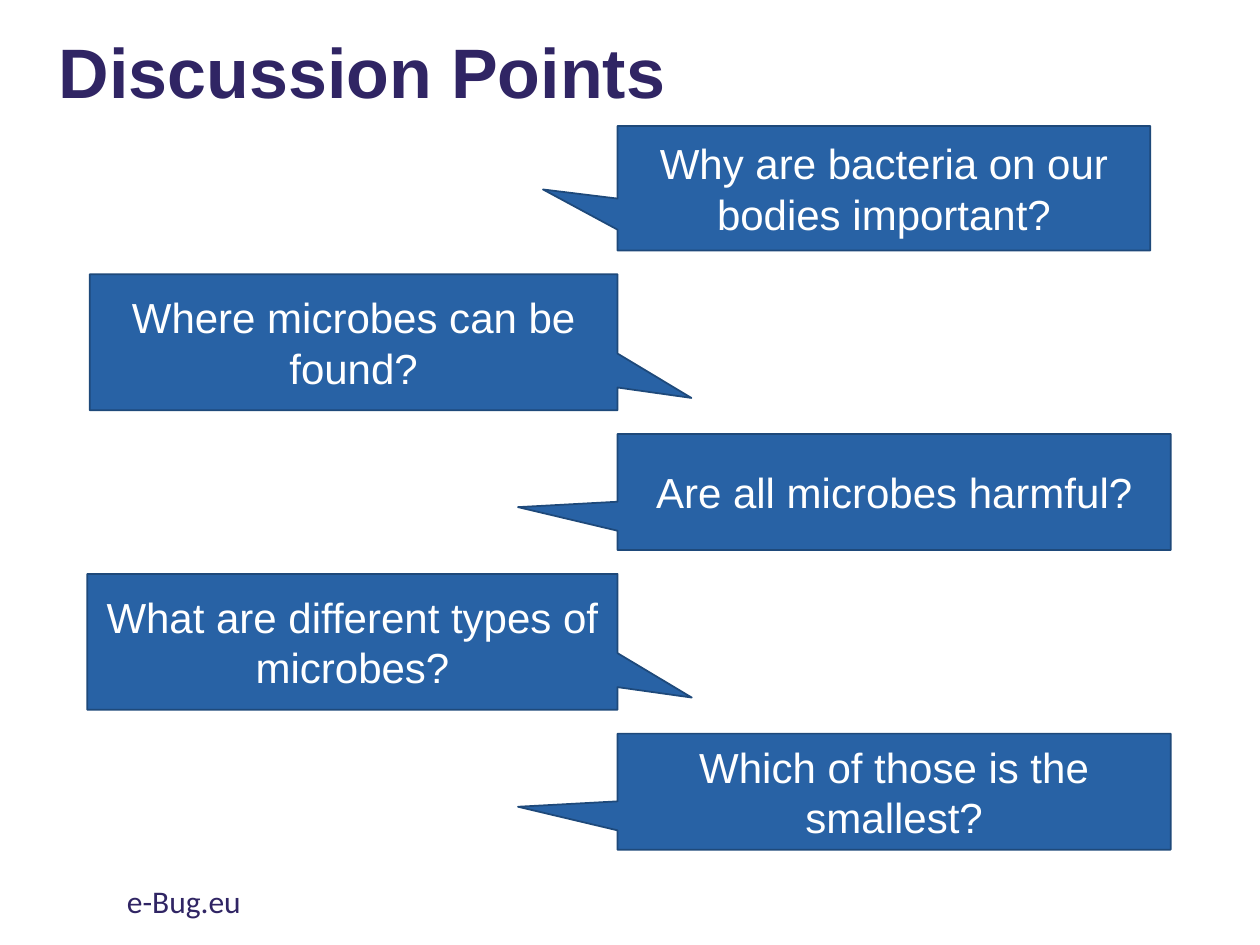
import pptx
import pptx.dml.color
import pptx.enum.shapes
import pptx.enum.text
import pptx.util
from dataclasses import dataclass

Cm = pptx.util.Cm
Pt = pptx.util.Pt
Align = pptx.enum.text.PP_ALIGN
Anchor = pptx.enum.text.MSO_ANCHOR


@dataclass(frozen=True)
class Theme:
    heading: str = "302564"
    callout_fill: str = "2862A5"
    callout_line: str = "1E497A"
    callout_text: str = "FFFFFF"
    font: str = "Arial"
    footer_font: str = "Calibri"
    title_size: int = 40
    callout_size: int = 24
    footer_size: int = 18


THEME = Theme()

# Callouts meet at a shared vertical axis and are stacked with an equal gap
AXIS = 12.45
FIRST_TOP = 2.54
GAP = 0.48

# Text, side of the axis, width, height, pointer offset (x, y)
QUESTIONS = [
    ("Why are bacteria on our bodies important?", "right", 10.74, 2.51, (-0.64, 0.01)),
    ("Where microbes can be found?", "left", 10.64, 2.74, (0.64, 0.41)),
    ("Are all microbes harmful?", "right", 11.15, 2.34, (-0.68, 0.13)),
    ("What are different types of microbes?", "left", 10.69, 2.74, (0.64, 0.41)),
    ("Which of those is the smallest?", "right", 11.15, 2.34, (-0.68, 0.13)),
]


def rgb(value):
    return pptx.dml.color.RGBColor.from_string(value)


def write_text(shape, text, *, size, color, font=THEME.font, bold=False,
               align=Align.LEFT, anchor=Anchor.TOP, line_spacing=None):
    frame = shape.text_frame
    frame.word_wrap = True
    frame.vertical_anchor = anchor
    paragraph = frame.paragraphs[0]
    paragraph.alignment = align
    paragraph.line_spacing = line_spacing
    run = paragraph.add_run()
    run.text = text
    run.font.name = font
    run.font.size = Pt(size)
    run.font.bold = bold
    run.font.color.rgb = rgb(color)


def add_text(slide, text, left, top, width, height, **text_format):
    shape = slide.shapes.add_textbox(Cm(left), Cm(top), Cm(width), Cm(height))
    write_text(shape, text, **text_format)


def add_callout(slide, text, left, top, width, height, pointer):
    shape = slide.shapes.add_shape(
        pptx.enum.shapes.MSO_SHAPE.RECTANGULAR_CALLOUT,
        Cm(left), Cm(top), Cm(width), Cm(height))
    shape.adjustments[0], shape.adjustments[1] = pointer
    shape.shadow.inherit = False
    shape.fill.solid()
    shape.fill.fore_color.rgb = rgb(THEME.callout_fill)
    shape.line.color.rgb = rgb(THEME.callout_line)
    shape.line.width = Pt(1)
    write_text(shape, text, size=THEME.callout_size, color=THEME.callout_text,
               align=Align.CENTER, anchor=Anchor.MIDDLE)


def main():
    presentation = pptx.Presentation()
    presentation.slide_width = Cm(25.4)
    presentation.slide_height = Cm(19.05)
    slide = presentation.slides.add_slide(presentation.slide_layouts[6])

    # Title
    add_text(slide, "Discussion Points", 0.94, 0.28, 14.35, 2.51,
             size=THEME.title_size, color=THEME.heading, bold=True,
             anchor=Anchor.MIDDLE, line_spacing=0.9)

    # Questions, alternating around the axis
    top = FIRST_TOP
    for text, side, width, height, pointer in QUESTIONS:
        left = AXIS if side == "right" else AXIS - width
        add_callout(slide, text, left, top, width, height, pointer)
        top += height + GAP

    # Footer
    add_text(slide, "e-Bug.eu", 2.31, 17.65, 8.59, 1.02,
             size=THEME.footer_size, color=THEME.heading, font=THEME.footer_font)

    presentation.save("out.pptx")


if __name__ == "__main__":
    main()
